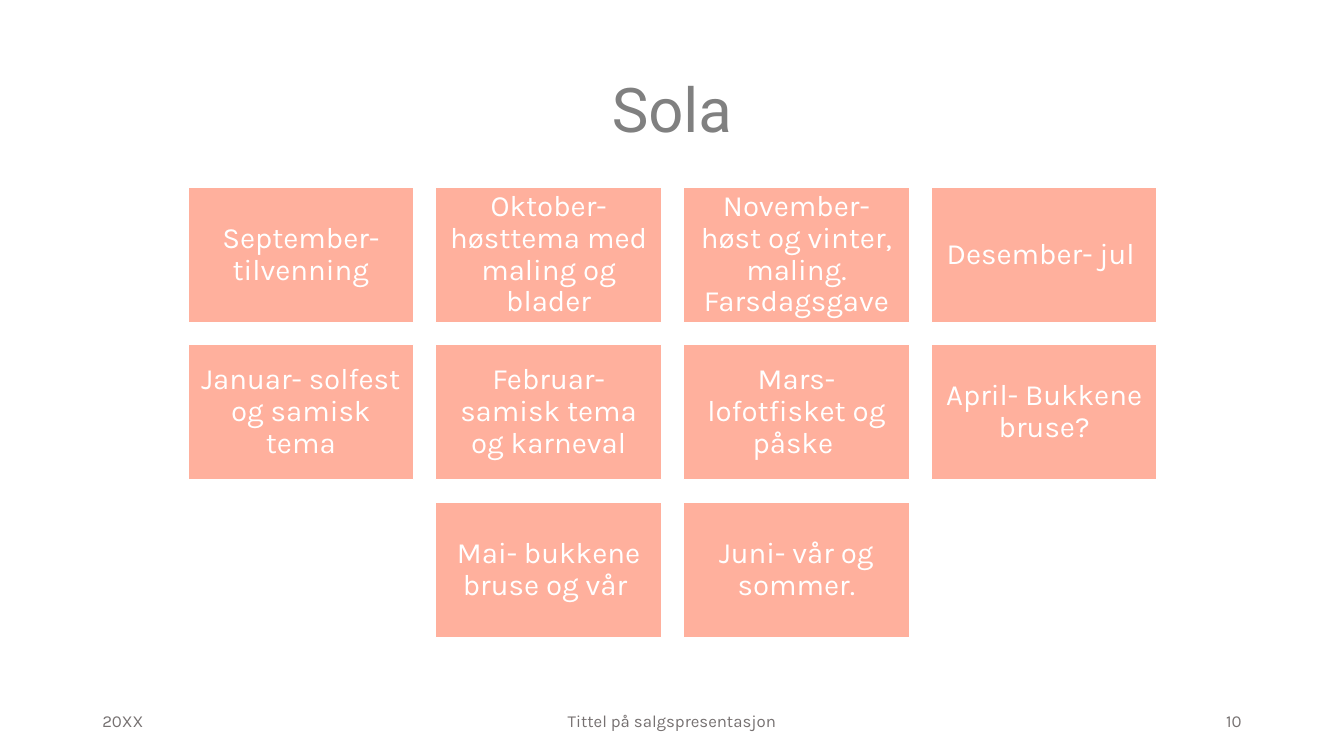
from pptx import Presentation
from pptx import util as u
from pptx.dml.color import RGBColor
from pptx.enum import shapes, text

PX = 9525  # EMU per px, 96 px to the inch
COLORS = {"title": "808080", "footer": "767171", "card": "FFB09D", "white": "FFFFFF"}
LEFT, CENTER, RIGHT = text.PP_ALIGN.LEFT, text.PP_ALIGN.CENTER, text.PP_ALIGN.RIGHT

MONTHS = [
    ["September- tilvenning",
     "Oktober- høsttema med maling og blader",
     "November- høst og vinter, maling. Farsdagsgave",
     "Desember- jul "],
    ["Januar- solfest og samisk tema",
     "Februar- samisk tema og karneval",
     "Mars- lofotfisket og påske ",
     "April- Bukkene bruse?"],
    ["Mai- bukkene bruse og vår ",
     "Juni- vår og sommer."],
]


def px(*lengths):
    return [u.Emu(length * PX) for length in lengths]


def color(name):
    return RGBColor.from_string(COLORS[name])


def write(shape, words, align, spacing, **font):
    frame = shape.text_frame
    frame.word_wrap = True
    frame.vertical_anchor = text.MSO_ANCHOR.MIDDLE
    paragraph = frame.paragraphs[0]
    paragraph.alignment = align
    paragraph.line_spacing = spacing
    run = paragraph.add_run()
    run.text = words
    run.font.color.rgb = color(font.pop("color"))
    for key, value in font.items():
        setattr(run.font, key, value)


def add_title(slide, box, words):
    title = slide.shapes.add_textbox(*px(*box))
    write(title, words, CENTER, 0.9, name="Roboto", size=u.Pt(44), color="title")


def add_card(slide, box, words):
    card = slide.shapes.add_shape(shapes.MSO_SHAPE.RECTANGLE, *px(*box))
    card.shadow.inherit = False
    card.fill.solid()
    card.fill.fore_color.rgb = color("card")
    card.line.color.rgb = color("white")
    card.line.width = u.Pt(1)
    for side in ("left", "top", "right", "bottom"):
        setattr(card.text_frame, f"margin_{side}", px(8)[0])
    write(card, words, CENTER, 0.9, name="Karla", size=u.Pt(21), color="white")


def add_months(slide, box, rows, gap=21):
    left, top, width, height = box
    columns = max(len(row) for row in rows)
    card_w = (width - gap * (columns - 1)) // columns
    card_h = (height - gap * (len(rows) - 1)) // len(rows)
    for r, row in enumerate(rows):
        # Short rows are centred
        indent = (columns - len(row)) * (card_w + gap) // 2
        for c, month in enumerate(row):
            x = left + indent + c * (card_w + gap)
            y = top + r * (card_h + gap)
            add_card(slide, (x, y, card_w, card_h), month)


def add_footer(slide, box, date, caption, number):
    left, top, width, height = box
    side_w, caption_w = 288, 432
    parts = [
        (date, left, side_w, LEFT),
        (caption, left + (width - caption_w) // 2, caption_w, CENTER),
        (number, left + width - side_w, side_w, RIGHT),
    ]
    for words, x, part_w, align in parts:
        part = slide.shapes.add_textbox(*px(x, top, part_w, height))
        write(part, words, align, 1.0, name="Karla", size=u.Pt(12), color="footer")


def main():
    deck = Presentation()
    deck.slide_width, deck.slide_height = px(1280, 720)
    slide = deck.slides.add_slide(deck.slide_layouts[6])
    slide.background.fill.solid()
    slide.background.fill.fore_color.rgb = color("white")

    # Heading
    add_title(slide, (88, 38, 1104, 139), "Sola")
    # Month cards
    add_months(slide, (179, 178, 923, 429), MONTHS)
    # Footer
    add_footer(slide, (88, 667, 1104, 38), "20XX", "Tittel på salgspresentasjon", "10")

    deck.save("out.pptx")


if __name__ == "__main__":
    main()
